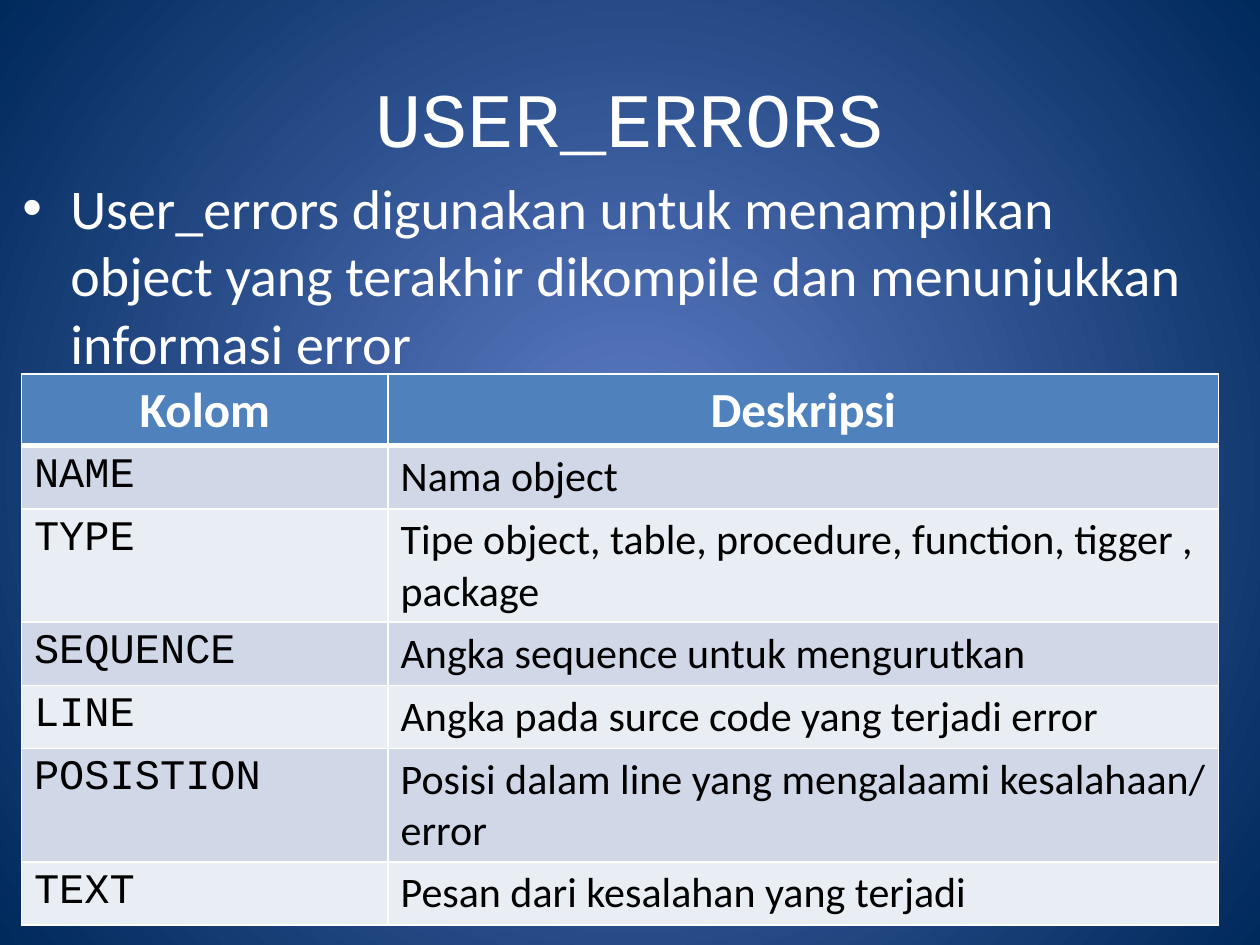
from lxml.etree import SubElement
from pptx import Presentation
from pptx.dml.color import RGBColor
from pptx.enum.text import MSO_ANCHOR as Anchor, PP_ALIGN as Align
from pptx.oxml.ns import qn
from pptx.util import Inches, Pt

COLORS = {
    "center": "5E7CC5",
    "edge": "00295C",
    "light": "FFFFFF",
    "dark": "000000",
    "header": "4F81BD",
    "odd": "D0D8E8",
    "even": "E9EDF4",
}
HEADINGS = ("Kolom", "Deskripsi")
ERROR_COLUMNS = [
    ("NAME", "Nama object"),
    ("TYPE", "Tipe object, table, procedure, function, tigger , package"),
    ("SEQUENCE", "Angka sequence untuk mengurutkan"),
    ("LINE", "Angka pada surce code yang terjadi error"),
    ("POSISTION", "Posisi dalam line yang mengalaami kesalahaan/ error"),
    ("TEXT", "Pesan dari kesalahan yang terjadi"),
]
COLUMN_WIDTHS = (2.91, 6.59)
HEADER_HEIGHT, SINGLE_LINE, DOUBLE_LINE = 0.53, 0.47, 0.84
TWO_LINE_ROWS = ("TYPE", "POSISTION")


class SlideBuilder:
    """Holds the fonts, the colours and the slide being built."""

    body_font = "Calibri"
    code_font = "Courier New"

    def __init__(self, deck):
        self.slide = deck.slides.add_slide(deck.slide_layouts[6])

    def color(self, key):
        return RGBColor.from_string(COLORS[key])

    def background(self):
        fill = self.slide.background.fill
        fill.gradient()
        for stop, key, position in zip(fill.gradient_stops, ("center", "edge"), (0, 1)):
            stop.color.rgb = self.color(key)
            stop.position = position
        gradient = self.slide.element.find(".//" + qn("a:gradFill"))
        gradient.remove(gradient.find(qn("a:lin")))
        circle = SubElement(gradient, qn("a:path"), {"path": "circle"})
        SubElement(circle, qn("a:fillToRect"), dict.fromkeys("ltrb", "50000"))

    def style_text(self, frame, text, size, font, color="light", align=Align.LEFT, bold=False):
        paragraph = frame.paragraphs[0]
        paragraph.text = text
        paragraph.alignment = align
        paragraph.font.size = Pt(size)
        paragraph.font.name = font
        paragraph.font.bold = bold
        paragraph.font.color.rgb = self.color(color)
        return paragraph

    def text_frame(self, left, top, width, height, anchor):
        box = self.slide.shapes.add_textbox(
            Inches(left), Inches(top), Inches(width), Inches(height)
        )
        box.text_frame.word_wrap = True
        box.text_frame.vertical_anchor = anchor
        return box.text_frame

    def title(self, text):
        frame = self.text_frame(0.5, 0.3, 9, 1.25, Anchor.MIDDLE)
        self.style_text(frame, text, 44, self.code_font, align=Align.CENTER)

    def bullet(self, text):
        frame = self.text_frame(0.08, 1.33, 9.58, 4.7, Anchor.TOP)
        paragraph = self.style_text(frame, text, 32, self.body_font)
        paragraph.space_before = Pt(6.4)
        properties = paragraph._p.get_or_add_pPr()
        indent = Inches(0.38)
        properties.set("marL", str(indent))
        properties.set("indent", str(-indent))
        marker = properties.makeelement(qn("a:buChar"), {"char": "•"})
        properties.find(qn("a:defRPr")).addprevious(marker)
        marker.addprevious(properties.makeelement(qn("a:buFont"), {"typeface": "Arial"}))

    def cell(self, cell, fill, top=1, bottom=1):
        properties = cell._tc.get_or_add_tcPr()
        for side, width in zip("LRTB", (1, 1, top, bottom)):
            line = SubElement(properties, qn(f"a:ln{side}"), w=str(Pt(width)))
            solid = SubElement(line, qn("a:solidFill"))
            SubElement(solid, qn("a:srgbClr"), val=COLORS["light"])
        cell.fill.solid()
        cell.fill.fore_color.rgb = self.color(fill)

    def table(self, headings, records):
        heights = [HEADER_HEIGHT] + [
            DOUBLE_LINE if name in TWO_LINE_ROWS else SINGLE_LINE for name, _ in records
        ]
        table = self.slide.shapes.add_table(
            len(heights), len(headings), Inches(0.17), Inches(2.97),
            Inches(sum(COLUMN_WIDTHS)), Inches(sum(heights)),
        ).table
        for column, width in zip(table.columns, COLUMN_WIDTHS):
            column.width = Inches(width)
        for row, height in zip(table.rows, heights):
            row.height = Inches(height)
        for index, heading in enumerate(headings):
            cell = table.cell(0, index)
            self.cell(cell, "header", bottom=3)
            self.style_text(cell.text_frame, heading, 28, self.body_font,
                            align=Align.CENTER, bold=True)
        for number, record in enumerate(records, 1):
            for index, (text, font) in enumerate(zip(record, (self.code_font, self.body_font))):
                cell = table.cell(number, index)
                self.cell(cell, "odd" if number % 2 else "even", top=3 if number == 1 else 1)
                self.style_text(cell.text_frame, text, 24, font, "dark")


def main():
    deck = Presentation()
    deck.slide_width, deck.slide_height = Inches(10), Inches(7.5)
    builder = SlideBuilder(deck)
    builder.background()
    builder.title("USER_ERRORS")
    builder.bullet(
        "User_errors digunakan untuk menampilkan object yang terakhir "
        "dikompile dan menunjukkan informasi error"
    )
    builder.table(HEADINGS, ERROR_COLUMNS)
    deck.save("out.pptx")


if __name__ == "__main__":
    main()
